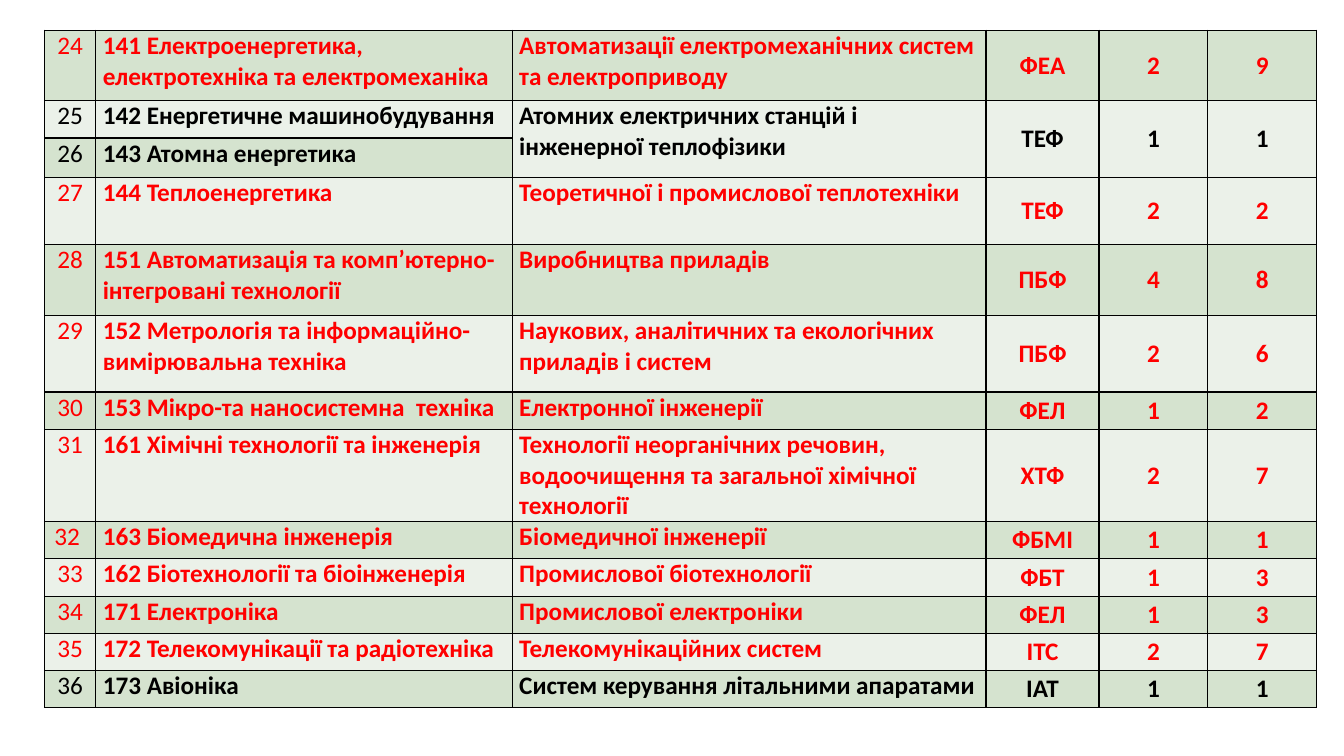
from lxml import etree
from pptx import Presentation
from pptx.dml.color import RGBColor
from pptx.enum import text as txt
from pptx.oxml import ns
from pptx.util import Inches, Pt

COLORS = {"red": "FF0000", "black": "000000", "dark_band": "D5E3CF", "light_band": "EBF1E9"}
COLUMN_WIDTHS = [0.51, 4.13, 4.7, 1.12, 1.08, 1.08]
ROW_HEIGHTS = [0.7, 0.37, 0.39, 0.67, 0.7, 0.76, 0.37, 0.63] + [0.37] * 5
BLACK_ROWS = {"25", "26", "36"}
MERGED_ROWS = (1, 2)
SPECIALTIES = [
    ("24", "141 Електроенергетика, електротехніка та електромеханіка",
     "Автоматизації електромеханічних систем та електроприводу", "ФЕА", "2", "9"),
    ("25", "142 Енергетичне машинобудування",
     "Атомних електричних станцій і інженерної теплофізики", "ТЕФ", "1", "1"),
    ("26", "143 Атомна енергетика", "", "", "", ""),
    ("27", "144 Теплоенергетика", "Теоретичної і промислової теплотехніки", "ТЕФ", "2", "2"),
    ("28", "151 Автоматизація та комп’ютерно-інтегровані технології",
     "Виробництва приладів", "ПБФ", "4", "8"),
    ("29", "152 Метрологія та інформаційно-вимірювальна техніка",
     "Наукових, аналітичних та екологічних приладів і систем", "ПБФ", "2", "6"),
    ("30", "153 Мікро-та наносистемна  техніка", "Електронної інженерії", "ФЕЛ", "1", "2"),
    ("31", "161 Хімічні технології та інженерія",
     "Технології неорганічних речовин, водоочищення та загальної хімічної технології",
     "ХТФ", "2", "7"),
    ("32 ", "163 Біомедична інженерія", "Біомедичної інженерії", "ФБМІ", "1", "1"),
    ("33", "162 Біотехнології та біоінженерія", "Промислової біотехнології", "ФБТ", "1", "3"),
    ("34", "171 Електроніка", "Промислової електроніки", "ФЕЛ", "1", "3"),
    ("35", "172 Телекомунікації та радіотехніка", "Телекомунікаційних систем", "ІТС", "2", "7"),
    ("36", "173 Авіоніка", "Систем керування літальними апаратами", "ІАТ", "1", "1"),
]


def add_borders(cell):
    """Draw a thin black line on every side of the cell."""
    properties = cell._tc.get_or_add_tcPr()
    for position, side in enumerate(("lnL", "lnR", "lnT", "lnB")):
        line = etree.Element(ns.qn(f"a:{side}"), w=str(Pt(1)))
        fill = etree.SubElement(line, ns.qn("a:solidFill"))
        etree.SubElement(fill, ns.qn("a:srgbClr"), val=COLORS["black"])
        properties.insert(position, line)


def format_cell(cell, content, column, color, band):
    """Write and style one cell according to its column."""
    cell.margin_left = cell.margin_right = Inches(0.07)
    cell.margin_top = cell.margin_bottom = 0
    cell.vertical_anchor = txt.MSO_ANCHOR.MIDDLE if column > 2 else txt.MSO_ANCHOR.TOP
    cell.fill.solid()
    cell.fill.fore_color.rgb = RGBColor.from_string(COLORS[band])
    add_borders(cell)
    cell.text_frame.text = content
    para = cell.text_frame.paragraphs[0]
    para.alignment = txt.PP_ALIGN.LEFT if column in (1, 2) else txt.PP_ALIGN.CENTER
    for span in para.runs:
        span.font.name = "Calibri"
        span.font.size = Pt(18)
        span.font.bold = column > 0
        span.font.color.rgb = RGBColor.from_string(COLORS[color])


def add_specialties_table(page, left, top, width, height):
    """Place the table of specialties and departments in the given box."""
    frame = page.shapes.add_table(len(SPECIALTIES), len(COLUMN_WIDTHS),
                                  Inches(left), Inches(top), Inches(width), Inches(height))
    table = frame.table
    table.first_row = False
    for column, size in zip(table.columns, COLUMN_WIDTHS):
        column.width = Inches(size)
    for row, size in zip(table.rows, ROW_HEIGHTS):
        row.height = Inches(size)
    first, last = MERGED_ROWS
    for column in range(2, len(COLUMN_WIDTHS)):
        table.cell(first, column).merge(table.cell(last, column))
    for row, specialty in enumerate(SPECIALTIES):
        color = "black" if specialty[0] in BLACK_ROWS else "red"
        band = "light_band" if row % 2 else "dark_band"
        for column, content in enumerate(specialty):
            format_cell(table.cell(row, column), content, column, color, band)


def main():
    """Build and save the one-page deck."""
    deck = Presentation()
    deck.slide_width, deck.slide_height = Inches(13.33), Inches(7.5)
    page = deck.slides.add_slide(deck.slide_layouts[6])
    add_specialties_table(page, 0.44, 0.3, sum(COLUMN_WIDTHS), sum(ROW_HEIGHTS))
    deck.save("out.pptx")


if __name__ == "__main__":
    main()
